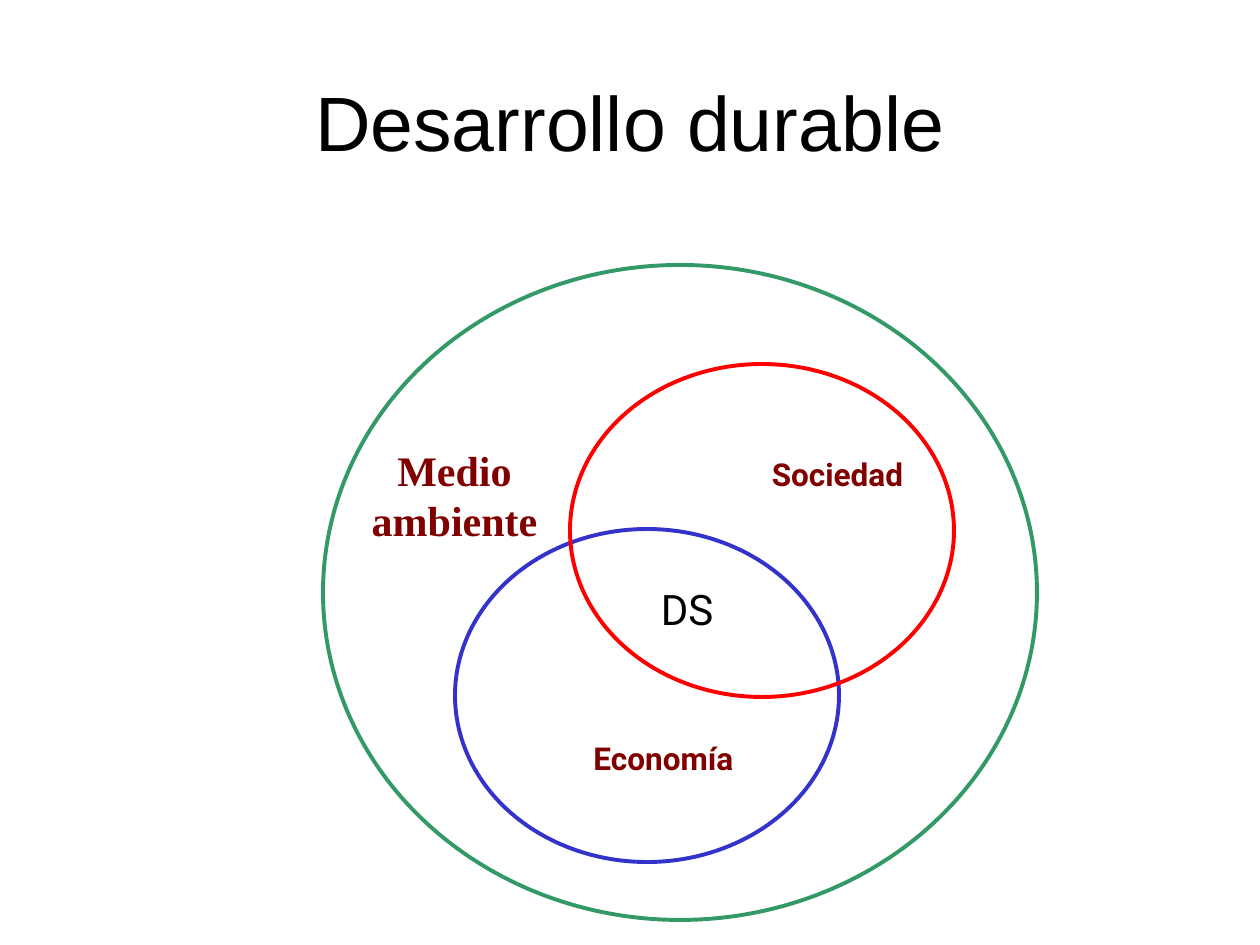
"""Build the sustainable development slide with its three nested circles."""
from dataclasses import dataclass

from pptx import Presentation
from pptx import util as u
from pptx.dml.color import RGBColor
from pptx.enum import shapes, text
from pptx.shapes.base import BaseShape
from pptx.shapes.group import GroupShape
from pptx.text.text import TextFrame

PX_PER_INCH = 126
COLORS = {
    "environment": "339966",
    "economy": "3333CC",
    "society": "FF0000",
    "label": "800000",
    "ink": "000000",
}


@dataclass(frozen=True)
class Box:
    left: int
    top: int
    width: int
    height: int


@dataclass(frozen=True)
class Circle:
    box: Box
    color: str


@dataclass(frozen=True)
class Label:
    box: Box
    wording: str
    size: int
    font: str = "Roboto"
    color: str = "label"
    bold: bool = True


CIRCLES = [
    Circle(Box(323, 265, 714, 655), "environment"),
    Circle(Box(455, 529, 384, 333), "economy"),
    Circle(Box(570, 364, 384, 333), "society"),
]
LABELS = [
    Label(Box(621, 577, 132, 63), "DS", 24, color="ink", bold=False),
    Label(Box(355, 438, 199, 113), "Medio ambiente", 24, "Times New Roman"),
    Label(Box(738, 449, 199, 50), "Sociedad", 18),
    Label(Box(556, 733, 215, 50), "Economía", 18),
]
HEADING = Label(Box(63, 42, 1134, 158), "Desarrollo durable", 44, "Arial", "ink", False)


def px(length: int) -> u.Emu:
    """Turn pixels into EMU."""
    return u.Emu(round(length * 914400 / PX_PER_INCH))


def place(box: Box) -> tuple[u.Emu, ...]:
    """Give left, top, width and height in EMU."""
    return px(box.left), px(box.top), px(box.width), px(box.height)


def draw_circle(diagram: GroupShape, circle: Circle) -> None:
    """Draw an unfilled outline."""
    outline = diagram.shapes.add_shape(shapes.MSO_SHAPE.OVAL, *place(circle.box))
    outline.shadow.inherit = False
    outline.fill.background()
    outline.line.color.rgb = RGBColor.from_string(COLORS[circle.color])
    outline.line.width = u.Pt(2.25)


def write(frame: TextFrame, label: Label) -> None:
    """Fill a frame with one centred, formatted paragraph."""
    frame.word_wrap = True
    frame.auto_size = text.MSO_AUTO_SIZE.NONE
    frame.text = label.wording
    paragraph = frame.paragraphs[0]
    paragraph.alignment = text.PP_ALIGN.CENTER
    paragraph.font.name = label.font
    paragraph.font.size = u.Pt(label.size)
    paragraph.font.bold = label.bold
    paragraph.font.color.rgb = RGBColor.from_string(COLORS[label.color])


def draw_label(diagram: GroupShape, label: Label) -> None:
    """Add a text box inside the diagram."""
    write(diagram.shapes.add_textbox(*place(label.box)).text_frame, label)


def set_heading(heading: BaseShape, label: Label) -> None:
    """Move and fill the title placeholder."""
    heading.left, heading.top, heading.width, heading.height = place(label.box)
    write(heading.text_frame, label)
    heading.text_frame.vertical_anchor = text.MSO_ANCHOR.MIDDLE


def main() -> None:
    """Build and save the slide."""
    deck = Presentation()
    deck.slide_width, deck.slide_height = u.Inches(10), u.Inches(7.5)
    slide = deck.slides.add_slide(deck.slide_layouts[5])
    set_heading(slide.shapes.title, HEADING)
    diagram = slide.shapes.add_group_shape()
    for circle in CIRCLES:
        draw_circle(diagram, circle)
    for label in LABELS:
        draw_label(diagram, label)
    deck.save("out.pptx")


if __name__ == "__main__":
    main()
